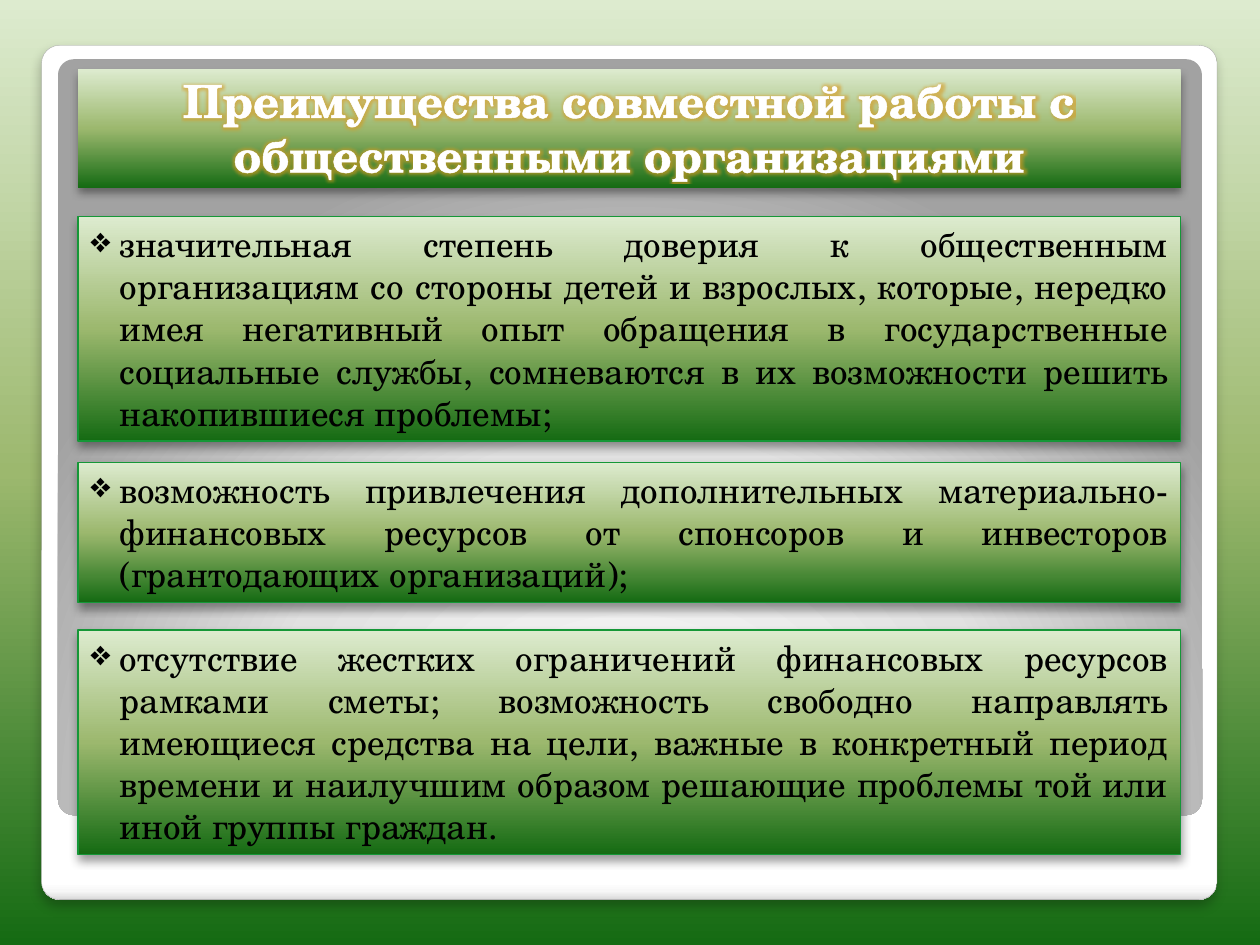
from lxml import etree
from pptx import Presentation
from pptx.dml.color import RGBColor
from pptx.enum.shapes import MSO_SHAPE
from pptx.enum.text import MSO_ANCHOR, PP_ALIGN
from pptx.oxml.ns import qn
from pptx.util import Inches, Pt

RECT, ROUND = MSO_SHAPE.RECTANGLE, MSO_SHAPE.ROUNDED_RECTANGLE
TOP, BOTTOM = MSO_ANCHOR.TOP, MSO_ANCHOR.BOTTOM
CENTER, JUSTIFY = PP_ALIGN.CENTER, PP_ALIGN.JUSTIFY
FONT = "TeX Gyre Schola"
COLORS = {"light": "DDEBCF", "leaf": "9CB86E", "forest": "156B13", "edge": "159737",
          "white": "FFFFFF", "mist": "F7F7F7", "silver": "DADADA", "fog": "E1E1E1",
          "grey": "A2A2A2", "rim": "A4A4A4", "black": "000000", "glow": "D89A20"}
GREEN = [(0, "light"), (50, "leaf"), (100, "forest")]
FRAME = [(0, "white"), (98, "white"), (99, "mist"), (100, "silver")]
PANEL = [(0, "white"), (55, "fog"), (100, "grey")]
LEFT, WIDTH = 0.62, 8.75
TITLE = "Преимущества совместной работы с общественными организациями"
BENEFITS = [
    (1.72, 1.78, "значительная степень доверия к общественным организациям со стороны детей "
     "и взрослых, которые, нередко имея негативный опыт обращения в государственные "
     "социальные службы, сомневаются в их возможности решить накопившиеся проблемы;"),
    (3.67, 1.11, "возможность привлечения дополнительных материально-финансовых ресурсов "
     "от спонсоров и инвесторов (грантодающих организаций);"),
    (5, 1.78, "отсутствие жестких ограничений финансовых ресурсов рамками сметы; возможность "
     "свободно направлять имеющиеся средства на цели, важные в конкретный период времени "
     "и наилучшим образом решающие проблемы той или иной группы граждан."),
]


def node(parent, tag, **attrs):
    """Append a DrawingML element with the given attributes."""
    return etree.SubElement(parent, qn(f"a:{tag}"), {k: str(v) for k, v in attrs.items()})


def paint(fill, root, stops, center=None):
    """Fill with a vertical gradient, or a circular one around the given center."""
    fill.gradient()
    grad = next(root.iter(qn("a:gradFill")))
    for child in list(grad):
        grad.remove(child)
    gs_list = node(grad, "gsLst")
    for pos, name in stops:
        node(node(gs_list, "gs", pos=pos * 1000), "srgbClr", val=COLORS[name])
    if center:
        node(node(grad, "path", path="circle"), "fillToRect",
             **{side: share * 1000 for side, share in zip("ltrb", center)})
    else:
        node(grad, "lin", ang=5400000, scaled=0)


def add_box(slide, kind, box, stops, center=None, line=None, shadow=None):
    """Add a gradient shape with an optional (colour, width) line and drop shadow."""
    shape = slide.shapes.add_shape(kind, *map(Inches, box))
    if kind == ROUND:
        shape.adjustments[0] = 0.021
    paint(shape.fill, shape._element.spPr, stops, center)
    if line:
        shape.line.color.rgb = RGBColor.from_string(COLORS[line[0]])
        shape.line.width = Pt(line[1])
    else:
        shape.line.fill.background()
    shape.shadow.inherit = False
    if shadow:
        alpha, blur, dist = shadow
        outer = node(shape._element.spPr.find(qn("a:effectLst")), "outerShdw", blurRad=Pt(blur),
                     dist=Pt(dist), dir=5400000, algn="t", rotWithShape=0)
        node(node(outer, "srgbClr", val=COLORS["black"]), "alpha", val=alpha * 1000)
    return shape


def write(shape, text, anchor, align, color, **font):
    """Put one formatted paragraph in a shape and return the paragraph and run."""
    tf = shape.text_frame
    tf.word_wrap, tf.vertical_anchor = True, anchor
    p = tf.paragraphs[0]
    p.alignment = align
    r = p.add_run()
    r.text = text
    for key, value in {"name": FONT, **font}.items():
        setattr(r.font, key, value)
    r.font.color.rgb = RGBColor.from_string(COLORS[color])
    return p, r


def add_frame(slide):
    """Paint the background and the two rounded panels."""
    paint(slide.background.fill, slide._element, GREEN)
    add_box(slide, ROUND, (0.33, 0.36, 9.33, 6.78), FRAME, line=("rim", 0.16), shadow=(25, 6, 4))
    add_box(slide, ROUND, (0.46, 0.47, 9.08, 6), PANEL, center=(50, 175, 50, -75))


def add_title(slide, box, text):
    """Add the title bar with outlined, glowing text."""
    shape = add_box(slide, RECT, box, GREEN, shadow=(40, 5.2, 3))
    r = write(shape, text, BOTTOM, CENTER, "white", size=Pt(26), bold=True)[1]
    props = r.font._element
    ln = node(props, "ln", w=Pt(0.75))
    node(node(ln, "solidFill"), "srgbClr", val=COLORS["white"])
    props.insert(0, ln)
    effects = node(props, "effectLst")
    glow = node(node(effects, "glow", rad=Pt(4)), "srgbClr", val=COLORS["glow"])
    node(glow, "alpha", val=60000)
    props.find(qn("a:solidFill")).addnext(effects)


def add_benefit(slide, box, text):
    """Add one bulleted benefit card."""
    shape = add_box(slide, RECT, box, GREEN, line=("edge", 0.75), shadow=(40, 5.2, 3))
    p = write(shape, text, TOP, JUSTIFY, "black", size=Pt(20))[0]
    props = p._p.get_or_add_pPr()
    indent = Inches(0.23)
    props.set("marL", str(indent))
    props.set("indent", str(-indent))
    node(props, "buChar", char="❖")


def main():
    """Build and save the slide."""
    prs = Presentation()
    prs.slide_width, prs.slide_height = Inches(10), Inches(7.5)
    s = prs.slides.add_slide(prs.slide_layouts[6])
    add_frame(s)
    add_title(s, (LEFT, 0.55, WIDTH, 0.94), TITLE)
    for top, height, text in BENEFITS:
        add_benefit(s, (LEFT, top, WIDTH, height), text)
    prs.save("out.pptx")


if __name__ == "__main__":
    main()
